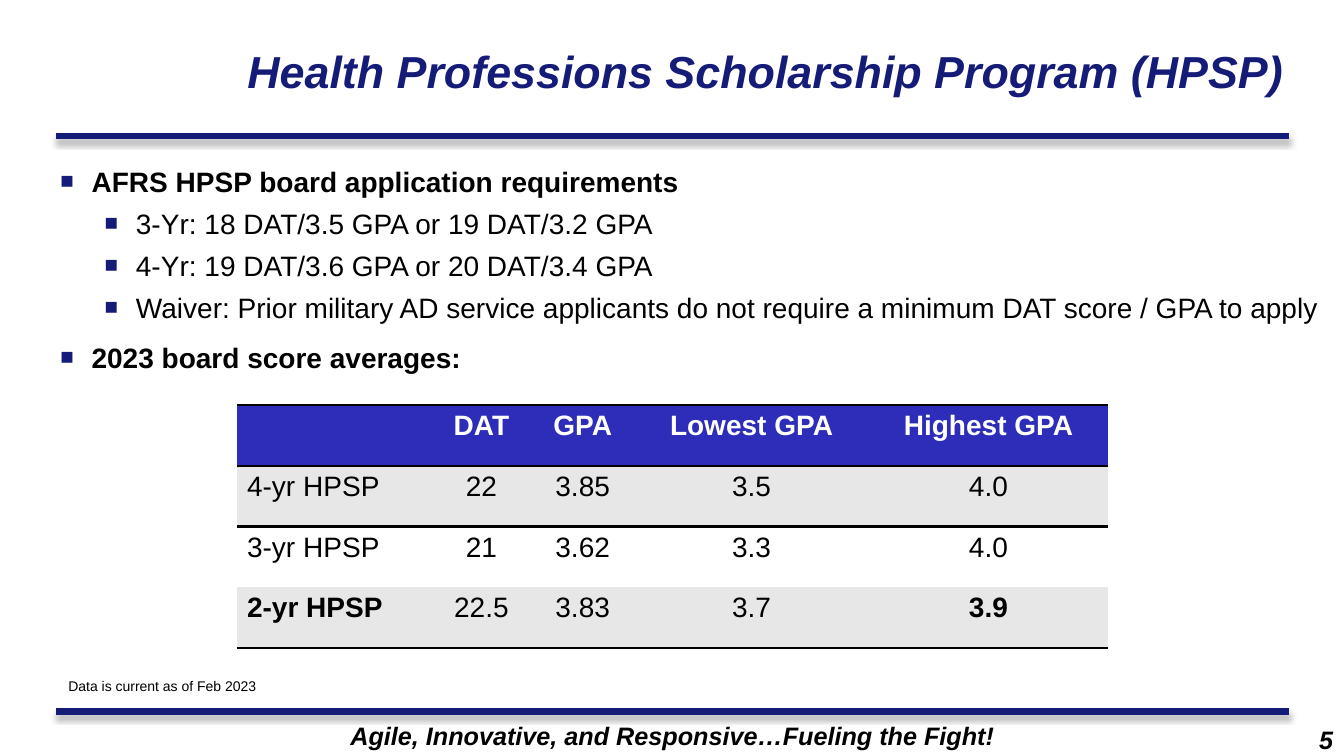
from lxml import etree
from pptx import Presentation
from pptx.dml.color import RGBColor
from pptx.enum.shapes import MSO_CONNECTOR
from pptx.enum.text import MSO_ANCHOR, PP_ALIGN
from pptx.oxml import parse_xml
from pptx.oxml.ns import nsdecls, qn
from pptx.util import Pt

PX = 9144  # EMU per px, 100 px to the inch
LEFT, CENTER, RIGHT = PP_ALIGN.LEFT, PP_ALIGN.CENTER, PP_ALIGN.RIGHT
MIDDLE = MSO_ANCHOR.MIDDLE
STRAIGHT = MSO_CONNECTOR.STRAIGHT
PLAIN_TABLE = "{2D5ABB26-0587-4C30-8999-92F81FD0307C}"

THEME = {
    "font": "Arial",
    "navy": "151C77", "header": "2D2DB9", "band": "E7E7E7",
    "white": "FFFFFF", "black": "000000",
    "title": 32, "body": 20, "footer": 18, "note": 10,
}


def write(paragraph, text, size="body", color="black", bold=False, italic=False,
          align=LEFT, before=0):
    paragraph.alignment = align
    paragraph.space_before = Pt(before)
    run = paragraph.add_run()
    run.text = text
    run.font.name = THEME["font"]
    run.font.size = Pt(THEME[size])
    run.font.color.rgb = RGBColor.from_string(THEME[color])
    run.font.bold = bold
    run.font.italic = italic


def text_frame(left, top, width, height):
    box = slide.shapes.add_textbox(left * PX, top * PX, width * PX, height * PX)
    box.text_frame.word_wrap = True
    return box.text_frame


prs = Presentation()
prs.slide_width, prs.slide_height = 1333 * PX, 750 * PX
slide = prs.slides.add_slide(prs.slide_layouts[5])

# Rules above and below the content
for rule_y in (706, 135):
    rule = slide.shapes.add_connector(STRAIGHT, 56 * PX, rule_y * PX, 1278 * PX, rule_y * PX)
    rule.line.color.rgb = RGBColor.from_string(THEME["navy"])
    rule.line.width = Pt(4.5)
    rule._element.spPr.append(parse_xml(
        f'<a:effectLst {nsdecls("a")}><a:outerShdw blurRad="{Pt(4)}" dist="{Pt(3)}" '
        'dir="5400000" rotWithShape="0"><a:srgbClr val="000000"><a:alpha val="40000"/>'
        '</a:srgbClr></a:outerShdw></a:effectLst>'))

# Motto and page number
write(text_frame(189, 710, 956, 40).paragraphs[0],
      "Agile, Innovative, and Responsive…Fueling the Fight!",
      size="footer", bold=True, italic=True, align=CENTER)
write(text_frame(1165, 714, 167, 33).paragraphs[0], "5",
      size="footer", bold=True, italic=True, align=RIGHT)

# Title
title = slide.shapes.title
title.left, title.top, title.width, title.height = 100 * PX, 8 * PX, 1184 * PX, 125 * PX
title.text_frame.vertical_anchor = MIDDLE
write(title.text_frame.paragraphs[0], "Health Professions Scholarship Program (HPSP)",
      size="title", color="navy", bold=True, italic=True, align=RIGHT)

# Requirements
requirements = [
    (0, "AFRS HPSP board application requirements"),
    (1, "3-Yr: 18 DAT/3.5 GPA or 19 DAT/3.2 GPA"),
    (1, "4-Yr: 19 DAT/3.6 GPA or 20 DAT/3.4 GPA"),
    (1, "Waiver: Prior military AD service applicants do not require "
        "a minimum DAT score / GPA to apply"),
    (0, "2023 board score averages:"),
]
body = text_frame(50, 158, 1283, 519)
for index, (level, text) in enumerate(requirements):
    paragraph = body.add_paragraph() if index else body.paragraphs[0]
    paragraph.level = level
    props = paragraph._p.get_or_add_pPr()
    props.set("marL", str((31 + 44 * level) * PX))
    props.set("indent", str(-31 * PX))
    color = etree.SubElement(props, qn("a:buClr"))
    etree.SubElement(color, qn("a:srgbClr"), val=THEME["navy"])
    etree.SubElement(props, qn("a:buSzPct"), val="80000")
    etree.SubElement(props, qn("a:buFont"), typeface=THEME["font"])
    etree.SubElement(props, qn("a:buChar"), char="■")
    before = (11.5, 6)[level] if index else 0
    write(paragraph, text, bold=level == 0, before=before)

# Score averages
scores = [
    ("", "DAT", "GPA", "Lowest GPA", "Highest GPA"),
    ("4-yr HPSP", "22", "3.85", "3.5", "4.0"),
    ("3-yr HPSP", "21", "3.62", "3.3", "4.0"),
    ("2-yr HPSP", "22.5", "3.83", "3.7", "3.9"),
]
bold_scores = {"2-yr HPSP", "3.9"}
row_fills = ("header", "band", "white", "band")
row_borders = (("lnT", "lnB"), ("lnT",), (), ("lnB",))
column_widths = (193, 99, 102, 233, 237)

table = slide.shapes.add_table(len(scores), len(column_widths), 235 * PX, 402 * PX,
                               sum(column_widths) * PX, 241 * PX).table
table._tbl.tblPr.find(qn("a:tableStyleId")).text = PLAIN_TABLE
for column, width in zip(table.columns, column_widths):
    column.width = width * PX
for r, row in enumerate(scores):
    for c, text in enumerate(row):
        cell = table.cell(r, c)
        for side in row_borders[r]:
            border = etree.SubElement(cell._tc.get_or_add_tcPr(), qn(f"a:{side}"), w=str(Pt(2)))
            line_fill = etree.SubElement(border, qn("a:solidFill"))
            etree.SubElement(line_fill, qn("a:srgbClr"), val=THEME["black"])
        cell.fill.solid()
        cell.fill.fore_color.rgb = RGBColor.from_string(THEME[row_fills[r]])
        if text:
            write(cell.text_frame.paragraphs[0], text,
                  color="black" if r else "white",
                  bold=r == 0 or text in bold_scores,
                  align=CENTER if c else LEFT)

# Data note
write(text_frame(58, 667, 586, 27).paragraphs[0], "Data is current as of Feb 2023", size="note")

prs.save("out.pptx")
